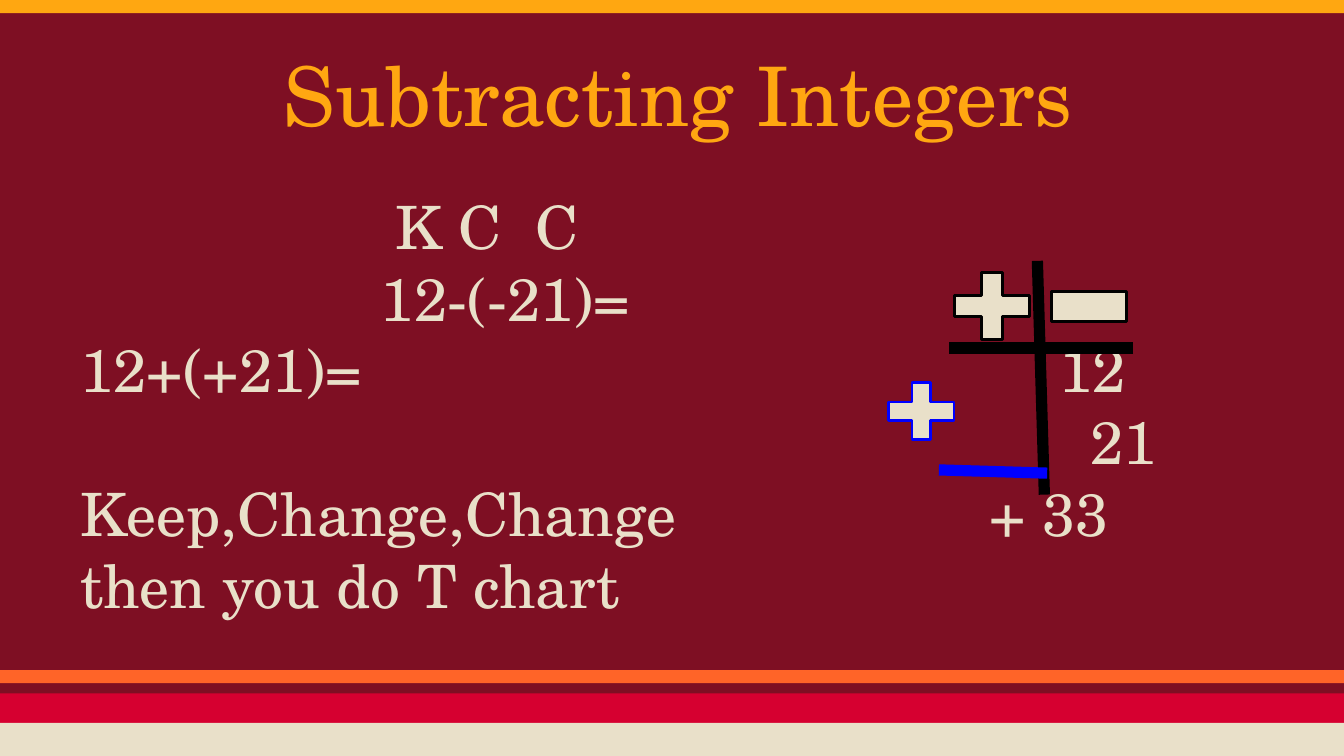
from pptx import Presentation
from pptx.dml.color import RGBColor
from pptx.enum.shapes import MSO_CONNECTOR as Connector, MSO_SHAPE as Shape
from pptx.enum.text import MSO_ANCHOR as Anchor
from pptx.oxml.ns import qn
from pptx.util import Pt
from lxml.etree import SubElement

MAROON = RGBColor(0x7E, 0x0F, 0x23)
GOLD = RGBColor(0xFF, 0xA7, 0x11)
CRIMSON = RGBColor(0xD6, 0x00, 0x30)
CREAM = RGBColor(0xE9, 0xE0, 0xC9)
ORANGE = RGBColor(0xFF, 0x64, 0x28)
BLACK = RGBColor(0, 0, 0)
BLUE = RGBColor(0, 0, 0xFF)


def add_shape(kind, left, top, width, height, fill, outline=None):
    shape = page.shapes.add_shape(kind, Pt(left), Pt(top), Pt(width), Pt(height))
    shape.shadow.inherit = False
    shape.fill.solid()
    shape.fill.fore_color.rgb = fill
    if outline is None:
        shape.line.fill.background()
    else:
        shape.line.color.rgb = outline
        shape.line.width = Pt(1.5)


def write(para, text, size, color):
    span = para.add_run()
    span.text = text
    span.font.name = "TeX Gyre Schola"
    span.font.size = Pt(size)
    span.font.color.rgb = color


deck = Presentation()
deck.slide_width, deck.slide_height = Pt(720), Pt(405)
page = deck.slides.add_slide(deck.slide_layouts[6])
page.background.fill.solid()
page.background.fill.fore_color.rgb = MAROON

for top, height, color in [
    (0, 7, GOLD),
    (371.5, 18, CRIMSON),
    (387.25, 17.75, CREAM),
    (359, 7, ORANGE),
]:
    add_shape(Shape.RECTANGLE, 0, top, 720, height, color)

title = page.shapes.add_textbox(Pt(36), Pt(16.5), Pt(648), Pt(67.5)).text_frame
body = page.shapes.add_textbox(Pt(36), Pt(94.5), Pt(648), Pt(257)).text_frame
for frame in (title, body):
    frame.word_wrap = True
    frame.margin_left = frame.margin_right = Pt(7.2)
    frame.margin_top = frame.margin_bottom = Pt(7.2)

title.margin_left = Pt(116)
title.vertical_anchor = Anchor.MIDDLE
write(title.paragraphs[0], "Subtracting Integers", 44, GOLD)

rows = [
    ("\tK C  C", 169),
    ("\t12-(-21)=", 161),
    ("12+(+21)=\t12", 524.5),
    ("\t21", 541),
    ("Keep,Change,Change\t+ 33", 487),
    ("then you do T chart", None),
]
for index, (text, tab) in enumerate(rows):
    para = body.add_paragraph() if index else body.paragraphs[0]
    if tab is not None:
        stops = SubElement(para._p.get_or_add_pPr(), qn("a:tabLst"))
        SubElement(stops, qn("a:tab"), pos=str(Pt(tab)), algn="l")
    write(para, text, 32, CREAM)

for start_x, start_y, end_x, end_y, color in [
    (555.75, 139.75, 559.5, 265, BLACK),
    (607, 186.5, 508.5, 186.5, BLACK),
    (561, 253.5, 503, 251.75, BLUE),
]:
    line = page.shapes.add_connector(
        Connector.STRAIGHT, Pt(start_x), Pt(start_y), Pt(end_x), Pt(end_y)
    )
    line.line.color.rgb = color
    line.line.width = Pt(6)
    SubElement(line._element.spPr, qn("a:effectLst"))

for kind, left, top, width, height, color in [
    (Shape.MATH_PLUS, 504, 139.5, 55, 49, BLACK),
    (Shape.MATH_MINUS, 556, 130.5, 55, 67.5, BLACK),
    (Shape.MATH_PLUS, 469.5, 199.5, 48, 41.5, BLUE),
]:
    add_shape(kind, left, top, width, height, CREAM, color)

deck.save("out.pptx")
